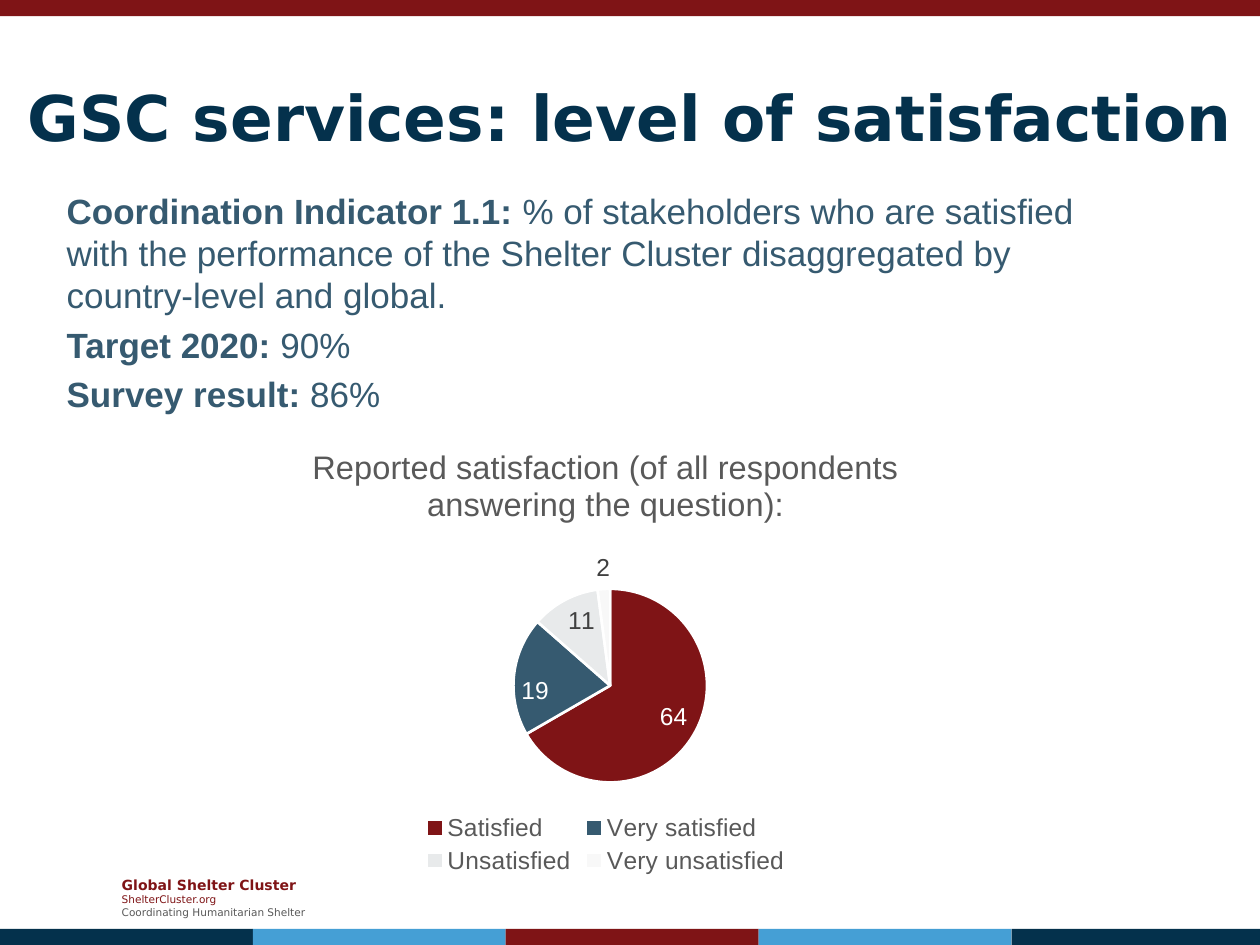
from lxml import etree
from pptx import Presentation
from pptx.chart.data import CategoryChartData
from pptx.dml.color import RGBColor
from pptx.enum.chart import XL_CHART_TYPE, XL_LABEL_POSITION, XL_LEGEND_POSITION
from pptx.enum.shapes import MSO_SHAPE
from pptx.enum.text import MSO_ANCHOR, PP_ALIGN
from pptx.util import Pt

PIE = XL_CHART_TYPE.PIE
INSIDE, OUTSIDE = XL_LABEL_POSITION.INSIDE_END, XL_LABEL_POSITION.OUTSIDE_END
BOTTOM = XL_LEGEND_POSITION.BOTTOM
RECTANGLE = MSO_SHAPE.RECTANGLE
TOP, MIDDLE = MSO_ANCHOR.TOP, MSO_ANCHOR.MIDDLE
LEFT, CENTER = PP_ALIGN.LEFT, PP_ALIGN.CENTER

COLORS = {
    "red": "7F1416", "navy": "04314C", "sky": "459FD5", "steel": "365A70",
    "light": "E8EAEB", "pale": "F8F8F8", "white": "FFFFFF",
    "gray": "595959", "dark": "404040",
}


def style(font, size, color, bold=False, name="Arial"):
    font.name, font.size, font.bold = name, Pt(size), bold
    font.color.rgb = RGBColor.from_string(COLORS[color])


def add_text(box, paragraphs, *, name="Arial", anchor=TOP, align=LEFT,
             before=0, spacing=None):
    """Each paragraph is a list of runs: (text, size, color, bold)."""
    left, top, width, height = box
    frame = slide.shapes.add_textbox(Pt(left), Pt(top), Pt(width), Pt(height)).text_frame
    frame.word_wrap = True
    frame.vertical_anchor = anchor
    for i, runs in enumerate(paragraphs):
        paragraph = frame.paragraphs[0] if i == 0 else frame.add_paragraph()
        paragraph.alignment = align
        paragraph.space_before = Pt(before if i else 0)
        if spacing:
            paragraph.line_spacing = Pt(spacing)
        for text, size, color, bold in runs:
            run = paragraph.add_run()
            run.text = text
            style(run.font, size, color, bold, name)


prs = Presentation()
prs.slide_width, prs.slide_height = Pt(720), Pt(540)
slide = prs.slides.add_slide(prs.slide_layouts[6])

# Top band and five-part bottom band
band_height, part = 9.2, 144.5
bands = [(0, 0, 720, "red")]
for i, color in enumerate(["navy", "sky", "red", "sky", "navy"]):
    left = i * part
    bands.append((left, 540 - band_height, min(part, 720 - left), color))
for left, top, width, color in bands:
    band = slide.shapes.add_shape(RECTANGLE, Pt(left), Pt(top), Pt(width), Pt(band_height))
    band.shadow.inherit = False
    band.fill.solid()
    band.fill.fore_color.rgb = RGBColor.from_string(COLORS[color])
    band.line.fill.background()

# Footer credit
add_text((62.5, 497, 124.5, 31.5), [
    [("Global Shelter Cluster", 8, "red", True)],
    [("ShelterCluster.org", 6, "red", False)],
    [("Coordinating Humanitarian Shelter", 6, "gray", False)],
], name="DejaVu Sans", anchor=MIDDLE)

# Title
add_text((0, 21.6, 720, 90),
         [[("GSC services: level of satisfaction", 36, "navy", True)]],
         name="DejaVu Sans", anchor=MIDDLE, align=CENTER)

# Satisfaction pie
results = CategoryChartData()
results.categories = ["Satisfied", "Very satisfied", "Unsatisfied", "Very unsatisfied"]
results.add_series("Series 1", [64, 19, 11, 2])
chart = slide.shapes.add_chart(PIE, Pt(105.8), Pt(242), Pt(481), Pt(260.6), results).chart
style(chart.font, 10, "dark")
chart.has_title = True
heading = chart.chart_title.text_frame.paragraphs[0].add_run()
heading.text = "Reported satisfaction (of all respondents answering the question):"
style(heading.font, 18.6, "gray")
chart.has_legend = True
chart.legend.position = BOTTOM
chart.legend.include_in_layout = False
style(chart.legend.font, 14, "gray")

plot = chart.plots[0]
plot.vary_by_categories = True
plot.has_data_labels = True
plot.data_labels.show_value = True
style(plot.data_labels.font, 14, "dark")
slices = [("red", "white", INSIDE), ("steel", "white", INSIDE),
          ("light", "dark", INSIDE), ("pale", "dark", OUTSIDE)]
for i, (fill, label_color, position) in enumerate(slices):
    point = plot.series[0].points[i]
    point.format.fill.solid()
    point.format.fill.fore_color.rgb = RGBColor.from_string(COLORS[fill])
    point.format.line.color.rgb = RGBColor.from_string(COLORS["white"])
    point.format.line.width = Pt(1.5)
    style(point.data_label.font, 14, label_color)
    point.data_label.position = position

# Fixed pie area, as fractions of the chart
C = "{http://schemas.openxmlformats.org/drawingml/2006/chart}"
plot_area = chart.element.find(f".//{C}plotArea")
for old in plot_area.findall(f"{C}layout"):
    plot_area.remove(old)
layout = etree.Element(f"{C}layout")
plot_area.insert(0, layout)
manual = etree.SubElement(layout, f"{C}manualLayout")
for tag, value in [("layoutTarget", "inner"), ("xMode", "edge"), ("yMode", "edge"),
                   ("x", "0.39"), ("y", "0.36"), ("w", "0.23"), ("h", "0.43")]:
    etree.SubElement(manual, f"{C}{tag}", val=value)

# Indicator, target and result
indicator = ("% of stakeholders who are satisfied with the performance of the "
             "Shelter Cluster disaggregated by country-level and global.")
facts = [("Coordination Indicator 1.1: ", indicator),
         ("Target 2020:", " 90%"), ("Survey result: ", "86%")]
add_text((31, 105, 630.7, 397.5),
         [[(label, 20, "steel", True), (value, 20, "steel", False)]
          for label, value in facts],
         before=4, spacing=24)

prs.save("out.pptx")
